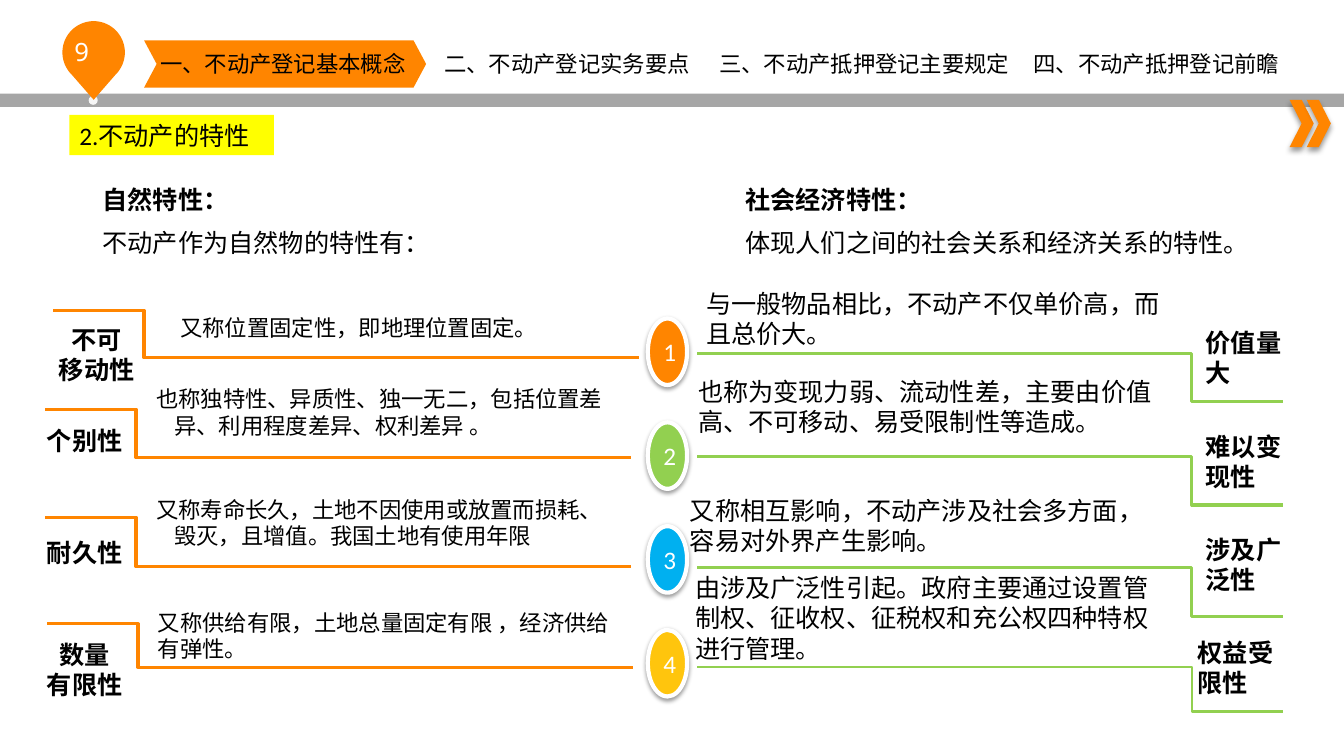
from dataclasses import dataclass
from math import cos, radians, sin

from lxml.etree import SubElement
from pptx import Presentation
from pptx.dml.color import RGBColor
from pptx.enum.shapes import MSO_SHAPE as SHAPE
from pptx.enum.text import MSO_ANCHOR as ANCHOR, PP_ALIGN as ALIGN
from pptx.oxml.ns import qn
from pptx.util import Inches, Pt


@dataclass(frozen=True)
class Theme:
    orange: str = "FF8500"
    green: str = "92D050"
    blue: str = "00B0F0"
    gold: str = "FFC50D"
    yellow: str = "FFFF00"
    gray: str = "A6A6A6"
    pale: str = "F6F6F6"
    white: str = "FFFFFF"
    black: str = "000000"
    font: str = "Calibri"
    cjk: str = "Noto Sans CJK SC"
    mono: str = "Noto Sans Mono"
    body: int = 18
    small: int = 16


class SlideBuilder:
    def __init__(self, slide, theme):
        self.shapes = slide.shapes
        self.theme = theme

    def paint(self, s, fill=None, line=None, width=1.0):
        s.shadow.inherit = False
        if fill:
            s.fill.solid()
            s.fill.fore_color.rgb = RGBColor.from_string(fill)
        else:
            s.fill.background()
        if line:
            s.line.color.rgb = RGBColor.from_string(line)
            s.line.width = Pt(width)
        else:
            s.line.fill.background()

    def shape(self, kind, box, fill, line=None, width=1.0):
        s = self.shapes.add_shape(kind, *map(Inches, box))
        self.paint(s, fill, line, width)
        return s

    def cast_shadow(self, s, alpha, blur, dist):
        effects = s._element.spPr.find(qn("a:effectLst"))
        shadow = SubElement(effects, qn("a:outerShdw"), blurRad=str(Pt(blur)),
                            dist=str(Pt(dist)), dir="5400000", rotWithShape="0")
        color = SubElement(shadow, qn("a:srgbClr"), val=self.theme.black)
        SubElement(color, qn("a:alpha"), val=str(alpha * 1000))

    def outline(self, points, closed=False, **style):
        pts = [(Inches(x), Inches(y)) for x, y in points]
        fb = self.shapes.build_freeform(*pts[0])
        fb.add_line_segments(pts[1:], close=closed)
        self.paint(fb.convert_to_shape(), **style)

    def step(self, x, y, dx, dy, color, width=2.25):
        bend = x + dx
        end = bend + (4.91 if dx < 2 else 0.9)
        self.outline([(x, y), (bend, y), (bend, y + dy), (end, y + dy)],
                     line=color, width=width)

    def set_text(self, s, lines, size=None, color=None, bold=False, font=None,
                 align=ALIGN.LEFT, gap=0, hang=0.0):
        tf = s.text_frame
        tf.word_wrap = True
        for i, line in enumerate(lines):
            p = tf.paragraphs[0] if i == 0 else tf.add_paragraph()
            p.add_run().text = line
            p.alignment = align
            if hang:
                pPr = p._p.get_or_add_pPr()
                pPr.set("marL", str(Inches(hang)))
                pPr.set("indent", str(-Inches(hang)))
            if i:
                p.space_before = Pt(gap)
            p.font.size = Pt(size or self.theme.body)
            p.font.name = font or self.theme.font
            p.font.bold = bold is True or (bold == "first" and i == 0)
            p.font.color.rgb = RGBColor.from_string(color or self.theme.black)
        return tf

    def text(self, box, *lines, tight=False, **style):
        tb = self.shapes.add_textbox(*map(Inches, box))
        tf = self.set_text(tb, lines, **style)
        if tight:
            tf.vertical_anchor = ANCHOR.MIDDLE
            tf.margin_left = tf.margin_right = tf.margin_top = tf.margin_bottom = 0

    def badge(self, number, y, color):
        s = self.shape(SHAPE.OVAL, (6.43, y, 0.39, 0.66), color, self.theme.white, 3)
        self.cast_shadow(s, 38, 3.1, 1.6)
        tf = self.set_text(s, [str(number)], color=self.theme.white, align=ALIGN.CENTER)
        tf.vertical_anchor = ANCHOR.MIDDLE


def draw_header(b, t):
    b.shape(SHAPE.RECTANGLE, (0, 0.93, 13.34, 0.13), t.gray)
    for x in (12.8, 12.97):
        b.cast_shadow(b.shape(SHAPE.CHEVRON, (x, 0.99, 0.24, 0.47), t.orange), 40, 4, 3)
    b.shape(SHAPE.OVAL, (0.88, 0.95, 0.09, 0.09), t.pale)
    arc = [(0.93 + 0.31 * cos(radians(a)), 0.52 + 0.31 * sin(radians(a)))
           for a in range(-226, 47, 4)]
    b.outline(arc + [(0.93, 0.99)], closed=True, fill=t.orange)
    b.text((0.45, 0.31, 0.72, 0.4), "9", font=t.mono, color=t.white, align=ALIGN.CENTER)
    tab = b.shape(SHAPE.CHEVRON, (1.43, 0.4, 2.8, 0.47), t.orange)
    tab.adjustments[0] = 0.267
    for x, w, title, font, align in (
        (1.59, 2.47, "一、不动产登记基本概念", t.font, ALIGN.LEFT),
        (4.41, 2.55, "二、不动产登记实务要点", t.cjk, ALIGN.LEFT),
        (6.9, 3.36, "三、不动产抵押登记主要规定", t.font, ALIGN.CENTER),
        (10.26, 2.59, "四、不动产抵押登记前瞻", t.cjk, ALIGN.LEFT),
    ):
        b.text((x, 0.5, w, 0.27), title, tight=True, size=t.small, font=font, align=align)
    title = b.shape(SHAPE.RECTANGLE, (0.69, 1.14, 2.03, 0.4), t.yellow)
    tf = b.set_text(title, ["2.不动产的特性"])
    tf.vertical_anchor = ANCHOR.TOP


def draw_natural(b, t):
    b.text((0.92, 1.78, 5.2, 0.86), "自然特性：", "不动产作为自然物的特性有：",
           bold="first", gap=9)
    for x, y, drop in ((0.53, 3.08, 0.47), (0.45, 4.06, 0.48),
                       (0.45, 5.13, 0.49), (0.47, 6.19, 0.43)):
        b.step(x, y, 0.9, drop, t.orange)
    for box, lines in (
        ((0.57, 3.22, 0.78, 0.6), ("不可", "移动性")),
        ((0.45, 4.22, 0.78, 0.3), ("个别性",)),
        ((0.45, 5.33, 0.78, 0.3), ("耐久性",)),
        ((0.45, 6.34, 0.78, 0.6), ("数量", "有限性")),
    ):
        b.text(box, *lines, tight=True, bold=True, align=ALIGN.CENTER)
    for box, line in (
        ((1.79, 3.11, 3.94, 0.27), "又称位置固定性，即地理位置固定。"),
        ((1.55, 3.82, 4.51, 0.53),
         "也称独特性、异质性、独一无二，包括位置差异、利用程度差异、权利差异 。"),
        ((1.55, 4.92, 4.57, 0.53),
         "又称寿命长久，土地不因使用或放置而损耗、毁灭，且增值。我国土地有使用年限"),
    ):
        b.text(box, line, tight=True, size=t.small, hang=0.18)
    b.text((1.47, 5.99, 4.73, 0.64),
           "又称供给有限，土地总量固定有限 ，经济供给有弹性。", size=t.small)


def draw_social(b, t):
    b.text((7.3, 1.78, 5.2, 0.86), "社会经济特性：",
           "体现人们之间的社会关系和经济关系的特性。", bold="first", gap=9)
    for y, drop, width in ((3.51, 0.47, 2.25), (4.53, 0.48, 2.25),
                           (5.63, 0.49, 2.25), (6.62, 0.44, 1.75)):
        b.step(6.92, y, 4.91, drop, t.green, width)
    for x, y, h, line in (
        (6.91, 2.81, 0.7, "与一般物品相比，不动产不仅单价高，而且总价大。"),
        (6.83, 3.68, 0.71, "也称为变现力弱、流动性差，主要由价值高、不可移动、易受限制性等造成。"),
        (6.75, 4.86, 0.71, "又称相互影响，不动产涉及社会多方面，容易对外界产生影响。"),
        (6.8, 5.63, 1.01,
         "由涉及广泛性引起。政府主要通过设置管制权、征收权、征税权和充公权四种特权进行管理。"),
    ):
        b.text((x, y, 4.88, h), line)
    for x, y, label in ((11.87, 3.2, "价值量大"), (11.87, 4.23, "难以变现性"),
                        (11.87, 5.25, "涉及广泛性"), (11.79, 6.27, "权益受限性")):
        b.text((x, y, 1.1, 0.71), label, bold=True)


def main():
    prs = Presentation()
    prs.slide_width, prs.slide_height = Inches(13.34), Inches(7.5)
    t = Theme()
    b = SlideBuilder(prs.slides.add_slide(prs.slide_layouts[6]), t)
    draw_header(b, t)
    draw_natural(b, t)
    draw_social(b, t)
    for i, color in enumerate((t.orange, t.green, t.blue, t.gold)):
        b.badge(i + 1, 3.16 + 1.03 * i, color)
    prs.save("out.pptx")


if __name__ == "__main__":
    main()
